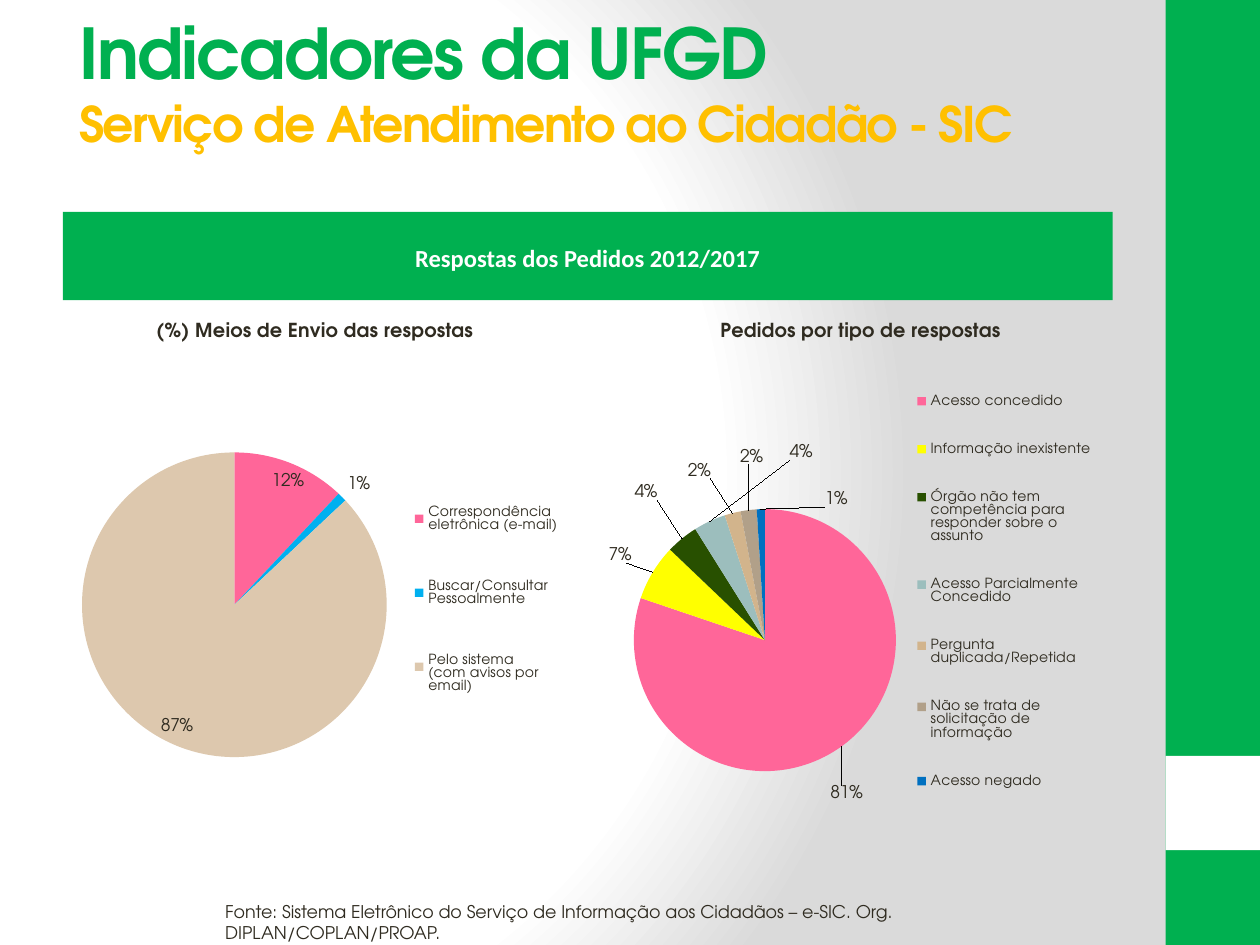
from dataclasses import dataclass

from pptx import Presentation
from pptx.chart.data import CategoryChartData
from pptx.dml.color import RGBColor
from pptx.enum.chart import XL_CHART_TYPE, XL_LABEL_POSITION, XL_LEGEND_POSITION
from pptx.enum.shapes import MSO_SHAPE
from pptx.enum.text import MSO_ANCHOR, PP_ALIGN
from pptx.oxml import parse_xml
from pptx.oxml.ns import nsdecls, qn
from pptx.util import Cm, Pt

PIE = XL_CHART_TYPE.PIE
BEST_FIT = XL_LABEL_POSITION.BEST_FIT
OUTSIDE_END = XL_LABEL_POSITION.OUTSIDE_END
LEGEND_RIGHT = XL_LEGEND_POSITION.RIGHT
RECTANGLE = MSO_SHAPE.RECTANGLE
MIDDLE = MSO_ANCHOR.MIDDLE
CENTER = PP_ALIGN.CENTER

HEADING_FONT = "TeX Gyre Adventor"
BANNER_FONT = "Calibri"
PERCENT_FORMAT = '0"%"'
COLORS = {
    "green": "00B050", "gold": "FFC000", "white": "FFFFFF", "gray": "DADADA",
    "text": "2F2B20", "pink": "FF6699", "sky": "00B0F0", "sand": "DDC8AE",
    "yellow": "FFFF00", "forest": "285000", "teal": "9CBEBD", "tan": "D2B48C",
    "taupe": "B1A089", "blue": "0070C0",
}


@dataclass
class Box:
    left: float
    top: float
    width: float
    height: float

    def lengths(self) -> tuple:
        return Cm(self.left), Cm(self.top), Cm(self.width), Cm(self.height)


@dataclass
class Slice:
    label: str
    value: int
    color: str
    label_offset: tuple[float, float] | None = None


@dataclass
class Pie:
    title: str
    left: float
    plot: tuple[float, float, float, float]
    legend: tuple[float, float, float, float]
    label_position: object
    slices: list[Slice]


BARS = [
    (Box(23.5, 0, 1.9, 19.05), "green"),
    (Box(23.5, 15.24, 1.9, 1.9), "white"),
]
PIES = [
    Pie("(%) Meios de Envio das respostas", 1.27, (0.03, 0.28, 0.62, 0.56),
        (0.69, 0.29, 0.3, 0.52), BEST_FIT, [
            Slice("Correspondência eletrônica (e-mail)", 12, "pink"),
            Slice("Buscar/Consultar Pessoalmente", 1, "sky"),
            Slice("Pelo sistema\n(com avisos por email)", 87, "sand"),
        ]),
    Pie("Pedidos por tipo de respostas", 12.27, (0.05, 0.28, 0.52, 0.69),
        (0.6, 0.11, 0.37, 0.85), OUTSIDE_END, [
            Slice("Acesso concedido", 81, "pink", (-0.03, 0.06)),
            Slice("Informação inexistente", 7, "yellow", (-0.04, -0.01)),
            Slice("Órgão não tem competência para responder sobre o assunto", 4, "forest",
                  (-0.04, -0.06)),
            Slice("Acesso Parcialmente Concedido", 4, "teal", (0.21, -0.1)),
            Slice("Pergunta duplicada/Repetida", 2, "tan", (-0.04, -0.05)),
            Slice("Não se trata de solicitação de informação", 2, "taupe", (0.03, -0.07)),
            Slice("Acesso negado", 1, "blue", (0.15, 0.01)),
        ]),
]


def rgb(name: str) -> RGBColor:
    return RGBColor.from_string(COLORS[name])


def style_font(font, size: float, color: str, bold: bool = False,
               name: str = HEADING_FONT) -> None:
    font.name = name
    font.size = Pt(size)
    font.bold = bold
    font.color.rgb = rgb(color)


def set_background(slide) -> None:
    slide.background.fill.gradient()
    stops = "".join(
        f'<a:gs pos="{position * 1000}"><a:srgbClr val="{COLORS[color]}"/></a:gs>'
        for position, color in [(0, "white"), (75, "white"), (100, "gray")])
    gradient = parse_xml(
        f'<a:gradFill {nsdecls("a")} rotWithShape="1"><a:gsLst>{stops}</a:gsLst>'
        '<a:path path="circle"><a:fillToRect l="20000" t="50000" r="100000" b="50000"/>'
        '</a:path></a:gradFill>')
    current = next(slide.element.iter(qn("a:gradFill")))
    current.getparent().replace(current, gradient)


def add_rectangle(slide, box: Box, color: str):
    shape = slide.shapes.add_shape(RECTANGLE, *box.lengths())
    shape.shadow.inherit = False
    shape.fill.solid()
    shape.fill.fore_color.rgb = rgb(color)
    shape.line.fill.background()
    return shape


def add_text(slide, box: Box, text: str):
    shape = slide.shapes.add_textbox(*box.lengths())
    shape.text_frame.word_wrap = True
    shape.text_frame.text = text
    return shape.text_frame


def add_title(slide) -> None:
    frame = add_text(slide, Box(1.35, 0.46, 21.16, 2.36),
                     "Indicadores da UFGD\vServiço de Atendimento ao Cidadão - SIC")
    frame.vertical_anchor = MIDDLE
    styles = [(40, "green"), (28, "gold")]
    for run, (size, color) in zip(frame.paragraphs[0].runs, styles):
        style_font(run.font, size, color, bold=True)
        run.font._element.set("spc", "-100")


def add_banner(slide) -> None:
    frame = add_rectangle(slide, Box(1.27, 4.27, 21.16, 1.78), "green").text_frame
    frame.text = "Respostas dos Pedidos 2012/2017"
    frame.vertical_anchor = MIDDLE
    frame.margin_top = Cm(0.18)
    paragraph = frame.paragraphs[0]
    paragraph.alignment = CENTER
    style_font(paragraph.runs[0].font, 14, "white", bold=True, name=BANNER_FONT)


def add_source_note(slide) -> None:
    frame = add_text(slide, Box(4.29, 18.03, 16, 1.12),
                     "Fonte: Sistema Eletrônico do Serviço de Informação aos Cidadãos – "
                     "e-SIC. Org. DIPLAN/COPLAN/PROAP.")
    style_font(frame.paragraphs[0].runs[0].font, 10, "text")


def manual_layout(settings: list[tuple[str, object]]):
    children = "".join(f'<c:{tag} val="{value}"/>' for tag, value in settings)
    return parse_xml(f'<c:layout {nsdecls("c")}><c:manualLayout>{children}'
                     '</c:manualLayout></c:layout>')


def place_part(part, index: int, frame: tuple[float, float, float, float],
               settings: list[tuple[str, object]]) -> None:
    for layout in part.findall(qn("c:layout")):
        part.remove(layout)
    edges = [("xMode", "edge"), ("yMode", "edge")]
    part.insert(index, manual_layout(settings + edges + list(zip("xywh", frame))))


def move_label(series, index: int, offset: tuple[float, float]) -> None:
    label = series.points[index].data_label
    style_font(label.font, 10, "text")
    label.position = OUTSIDE_END
    element = list(series.data_labels._element.iter(qn("c:dLbl")))[index]
    element.insert(1, manual_layout(list(zip("xy", offset))))
    number_format = parse_xml(f'<c:numFmt {nsdecls("c")} sourceLinked="0"/>')
    number_format.set("formatCode", PERCENT_FORMAT)
    element.insert(2, number_format)


def add_pie(slide, pie: Pie) -> None:
    data = CategoryChartData()
    data.categories = [item.label for item in pie.slices]
    data.add_series("Series 1", [item.value for item in pie.slices])
    box = Box(pie.left, 6.05, 10.16, 10.97)
    chart = slide.shapes.add_chart(PIE, *box.lengths(), data).chart
    style_font(chart.font, 10, "text")

    chart.has_title = True
    chart.chart_title.include_in_layout = False
    title = chart.chart_title.text_frame
    title.text = pie.title
    style_font(title.paragraphs[0].runs[0].font, 11, "text", bold=True)

    chart.has_legend = True
    chart.legend.position = LEGEND_RIGHT
    chart.legend.include_in_layout = False
    style_font(chart.legend.font, 8, "text")
    place_part(next(chart.element.iter(qn("c:legend"))), 1, pie.legend, [])
    place_part(next(chart.element.iter(qn("c:plotArea"))), 0, pie.plot,
               [("layoutTarget", "inner")])

    chart.plots[0].vary_by_categories = True
    series = chart.plots[0].series[0]
    labels = series.data_labels
    labels.show_value = True
    labels.number_format = PERCENT_FORMAT
    labels.number_format_is_linked = False
    labels.position = pie.label_position
    style_font(labels.font, 10, "text")
    for index, item in enumerate(pie.slices):
        point_format = series.points[index].format
        point_format.fill.solid()
        point_format.fill.fore_color.rgb = rgb(item.color)
        point_format.line.fill.background()
        if item.label_offset:
            move_label(series, index, item.label_offset)


def main() -> None:
    presentation = Presentation()
    presentation.slide_width = Cm(25.4)
    presentation.slide_height = Cm(19.05)
    slide = presentation.slides.add_slide(presentation.slide_layouts[6])
    set_background(slide)
    for box, color in BARS:
        add_rectangle(slide, box, color)
    add_title(slide)
    add_banner(slide)
    add_source_note(slide)
    for pie in PIES:
        add_pie(slide, pie)
    presentation.save("out.pptx")


if __name__ == "__main__":
    main()
